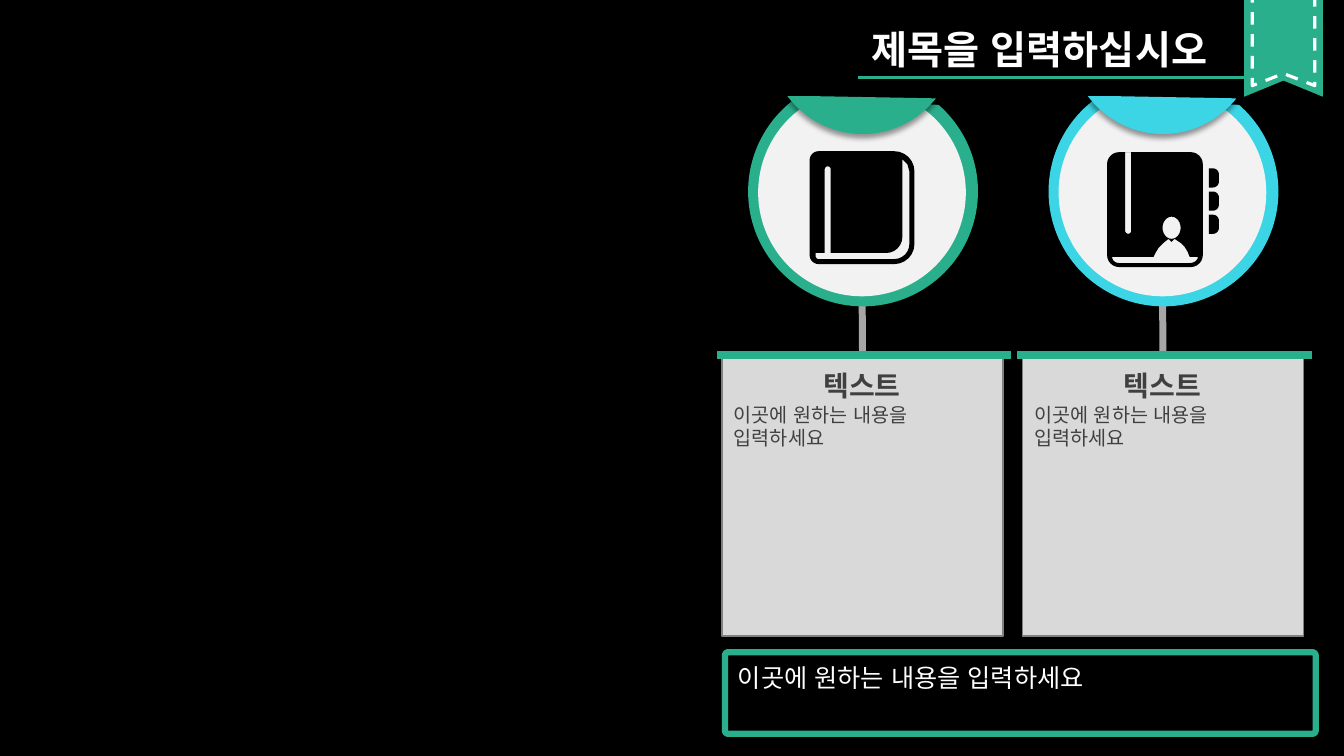
from dataclasses import dataclass
from math import cos, radians, sin

from lxml import etree
from pptx import Presentation
from pptx import util as u
from pptx.dml.color import RGBColor
from pptx.enum import dml, lang, shapes, text
from pptx.oxml import ns

Point = tuple[float, float]
Contour = list[Point]

COLORS = {
    "black": "000000", "white": "FFFFFF", "green": "29AF8C", "cyan": "3BD5E5",
    "card": "D9D9D9", "card_edge": "808080", "stem": "A6A6A6",
    "disc": "F2F2F2", "ink": "404040",
}
HANGUL_FONT = "Noto Sans CJK KR"
PROMPT = "이곳에 원하는 내용을 입력하세요"


@dataclass
class Card:
    left: float
    accent: str
    heading_font: str
    icon: list[list[Contour]]


@dataclass
class Line:
    content: str
    size: int
    font: str = "Calibri"
    color: str = "ink"
    bold: bool = False
    centered: bool = False


def rgb(name: str) -> RGBColor:
    return RGBColor.from_string(COLORS[name])


# Outlines, in inches
def arc(cx: float, cy: float, rx: float, ry: float, start: int, end: int) -> Contour:
    steps = max(6, abs(end - start) // 15)
    angles = [radians(start + (end - start) * i / steps) for i in range(steps + 1)]
    return [(cx + rx * cos(a), cy + ry * sin(a)) for a in angles]


def rounded(left: float, top: float, right: float, bottom: float,
            a: float, b: float) -> Contour:
    return [*arc(left + a, top + a, a, a, 180, 270), *arc(right - b, top + b, b, b, 270, 360),
            *arc(right - b, bottom - b, b, b, 0, 90), *arc(left + a, bottom - a, a, a, 90, 180)]


def ribbon(left: float, top: float, right: float, bottom: float, notch: float) -> Contour:
    return [(left, top), (right, top), (right, bottom),
            ((left + right) / 2, notch), (left, bottom)]


def tab(top: float) -> Contour:
    return [(11.99, top), *arc(12.03, top + 0.06, 0.06, 0.06, 270, 360),
            *arc(12.03, top + 0.13, 0.06, 0.06, 0, 90), (11.99, top + 0.19)]


book_cover = rounded(8.03, 1.5, 9.07, 2.62, 0.09, 0.2)
book_pages = [(8.95, 1.58), *arc(8.79, 2.35, 0.16, 0.16, 0, 90), (8.24, 2.51),
              *arc(8.21, 1.68, 0.03, 0.03, 360, 180), (8.18, 2.51), (8.09, 2.51),
              *arc(8.12, 2.54, 0.03, 0.03, 180, 90),
              *arc(8.87, 2.42, 0.15, 0.15, 90, 0), (9.02, 1.7), (9, 1.63)]
contacts_cover = rounded(10.98, 1.51, 11.93, 2.65, 0.12, 0.12)
contacts_slit = [(11.16, 1.51), (11.22, 1.51), *arc(11.19, 2.29, 0.03, 0.03, 0, 180)]
contacts_head = arc(11.62, 2.26, 0.09, 0.11, 0, 360)
contacts_bust = [(11.59, 2.37), (11.54, 2.41), (11.49, 2.46), (11.46, 2.51), (11.44, 2.55),
                 *arc(11.1, 2.55, 0.07, 0.06, 180, 90), *arc(11.8, 2.55, 0.08, 0.06, 90, 0),
                 (11.8, 2.55), (11.78, 2.5), (11.75, 2.45), (11.71, 2.41), (11.65, 2.37),
                 (11.62, 2.4)]
CARDS = [
    Card(7.16, "green", "Arial", [[book_cover, book_pages]]),
    Card(10.14, "cyan", HANGUL_FONT,
         [[contacts_cover, contacts_slit, contacts_head, contacts_bust],
          *([tab(1.67 + 0.23 * row)] for row in range(3))]),
]

deck = Presentation()
deck.slide_width, deck.slide_height = u.Inches(13.33), u.Inches(7.5)
slide = deck.slides.add_slide(deck.slide_layouts[6])
slide.background.fill.solid()
slide.background.fill.fore_color.rgb = rgb("black")


# Drawing functions
def paint(shape, fill: str | None, line: str | None = None, line_width: float = 1) -> None:
    shape.shadow.inherit = False
    if fill:
        shape.fill.solid()
        shape.fill.fore_color.rgb = rgb(fill)
    else:
        shape.fill.background()
    if line:
        shape.line.color.rgb = rgb(line)
        shape.line.width = u.Pt(line_width)
    else:
        shape.line.fill.background()


def add_preset(kind, left: float, top: float, width: float, height: float,
               adjustments: tuple = (), **colors):
    shape = slide.shapes.add_shape(kind, *map(u.Inches, (left, top, width, height)))
    for index, value in enumerate(adjustments):
        shape.adjustments[index] = value
    paint(shape, **colors)
    return shape


def add_outline(contours: list[Contour], **colors):
    first, *others = [[(u.Inches(x), u.Inches(y)) for x, y in c] for c in contours]
    builder = slide.shapes.build_freeform(*first[0], scale=1.0)
    builder.add_line_segments(first[1:], close=True)
    for contour in others:
        builder.move_to(*contour[0])
        builder.add_line_segments(contour[1:], close=True)
    shape = builder.convert_to_shape()
    paint(shape, **colors)
    return shape


def add_line(x1: float, y1: float, x2: float, y2: float, color: str, width: float):
    line = slide.shapes.add_connector(shapes.MSO_CONNECTOR.STRAIGHT,
                                      *map(u.Inches, (x1, y1, x2, y2)))
    line.line.color.rgb = rgb(color)
    line.line.width = u.Pt(width)
    etree.SubElement(line._element.spPr, ns.qn("a:effectLst"))
    return line


def add_text(lines: list[Line], left: float, top: float, width: float, height: float,
             wrap: bool = True) -> None:
    frame = slide.shapes.add_textbox(*map(u.Inches, (left, top, width, height))).text_frame
    frame.word_wrap = wrap
    frame.auto_size = text.MSO_AUTO_SIZE.SHAPE_TO_FIT_TEXT
    for index, line in enumerate(lines):
        paragraph = frame.add_paragraph() if index else frame.paragraphs[0]
        paragraph.alignment = text.PP_ALIGN.CENTER if line.centered else text.PP_ALIGN.LEFT
        run = paragraph.add_run()
        run.text = line.content
        font = run.font
        font.name, font.size, font.bold = line.font, u.Pt(line.size), line.bold
        font.color.rgb = rgb(line.color)
        font.language_id = lang.MSO_LANGUAGE_ID.KOREAN
        etree.SubElement(run._r.get_or_add_rPr(), ns.qn("a:ea"), typeface=HANGUL_FONT)


def add_lid(left: float, accent: str) -> None:
    lid = add_preset(shapes.MSO_SHAPE.CHORD, left, -0.57, 1.87, 1.9, (23.586, 85.644), fill=accent)
    lid.fill.gradient()
    lid.fill.gradient_angle = 90
    for stop, position, color in zip(lid.fill.gradient_stops, (0.53, 1), (accent, "card")):
        stop.position = position
        stop.color.rgb = rgb(color)
    effects = lid._element.spPr.find(ns.qn("a:effectLst"))
    shadow = etree.SubElement(effects, ns.qn("a:outerShdw"), blurRad=str(int(u.Pt(4))),
                              dist=str(int(u.Pt(3))), dir="5400000", algn="t", rotWithShape="0")
    shade = etree.SubElement(shadow, ns.qn("a:srgbClr"), val=COLORS["black"])
    etree.SubElement(shade, ns.qn("a:alpha"), val="40000")


def add_card(card: Card) -> None:
    x = card.left
    panel = add_preset(shapes.MSO_SHAPE.RECTANGLE, x, 3.52, 2.79, 2.79,
                       fill="card", line="card_edge")
    stem = add_line(x + 1.39, 2.86, x + 1.39, 3.52, "stem", 5)
    stem.end_connect(panel, 0)
    ring = add_preset(shapes.MSO_SHAPE.CHORD, x + 0.26, 0.76, 2.28, 2.28,
                      (186.629, 139.152), fill=card.accent)
    disc = add_preset(shapes.MSO_SHAPE.CHORD, x + 0.36, 0.88, 2.06, 2.06,
                      (183.409, 140.947), fill="disc")
    slide.shapes.add_group_shape([ring, disc])
    add_line(x - 0.05, 3.52, x + 2.87, 3.52, "green", 6)
    icon = [add_outline(part, fill="black") for part in card.icon]
    if len(icon) > 1:
        slide.shapes.add_group_shape(icon)
    add_text([Line("텍스트", 20, card.heading_font, bold=True, centered=True), Line(PROMPT, 14)],
             x + 0.02, 3.61, 2.74, 0.91)
    add_lid(x + 0.46, card.accent)


# Cards, footer note, title and ribbon
for card in CARDS:
    add_card(card)
add_preset(shapes.MSO_SHAPE.ROUNDED_RECTANGLE, 7.19, 6.47, 5.86, 0.81, (0.04,),
           fill=None, line="green", line_width=4.5)
add_text([Line(PROMPT, 18, color="white")], 7.22, 6.52, 5.76, 0.4)
add_line(12.34, 0.77, 8.51, 0.77, "green", 1.75)
add_text([Line("제목을 입력하십시오", 28, color="white", bold=True)], 8.55, 0.2, 3.83, 0.57, wrap=False)
band = add_outline([ribbon(12.34, -0.1, 13.12, 0.96, 0.8)], fill="green")
stitching = add_outline([ribbon(12.42, -0.09, 13.04, 0.85, 0.73)],
                        fill="green", line="white", line_width=2.25)
stitching.line.dash_style = dml.MSO_LINE.DASH
slide.shapes.add_group_shape([band, stitching])
deck.save("out.pptx")
